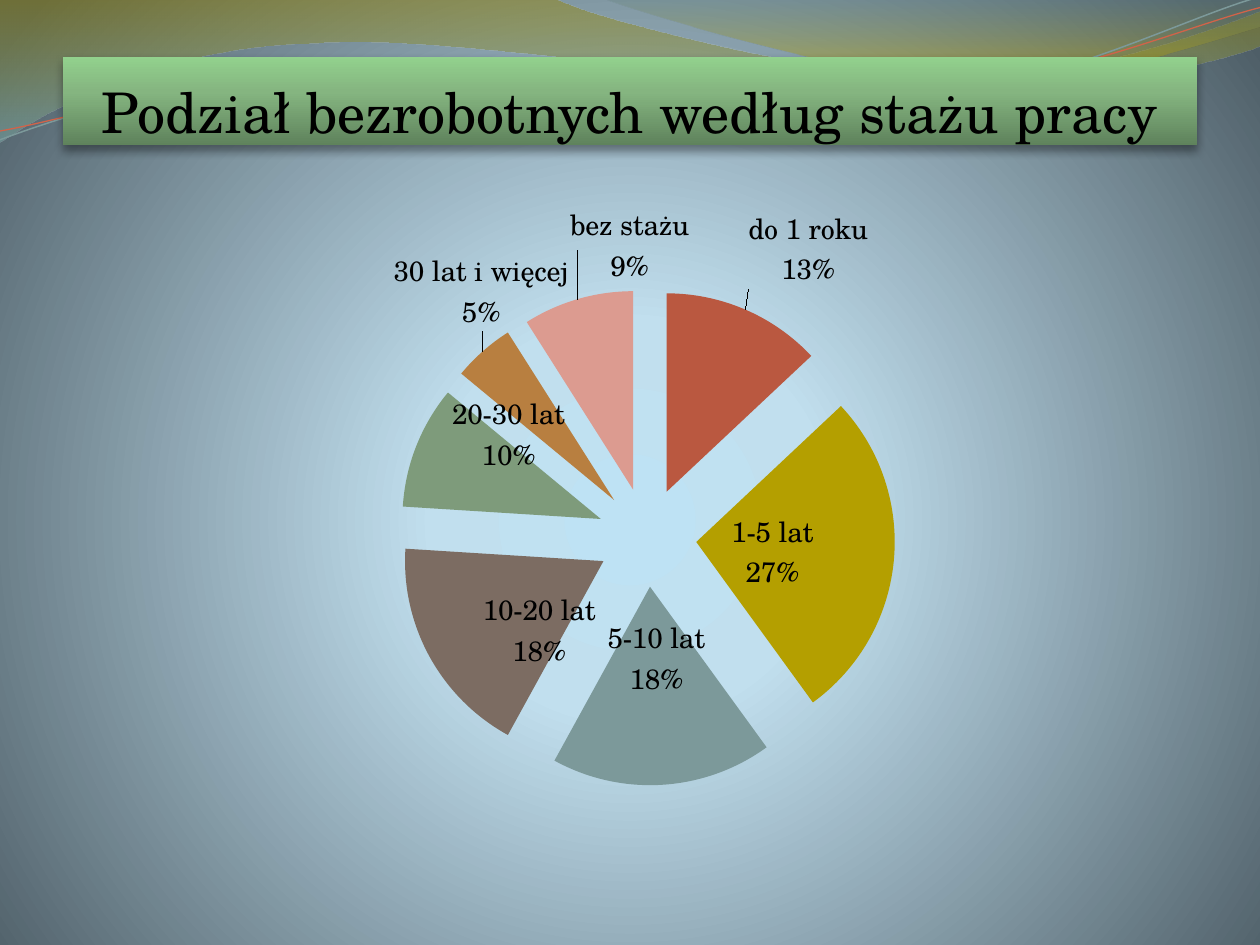
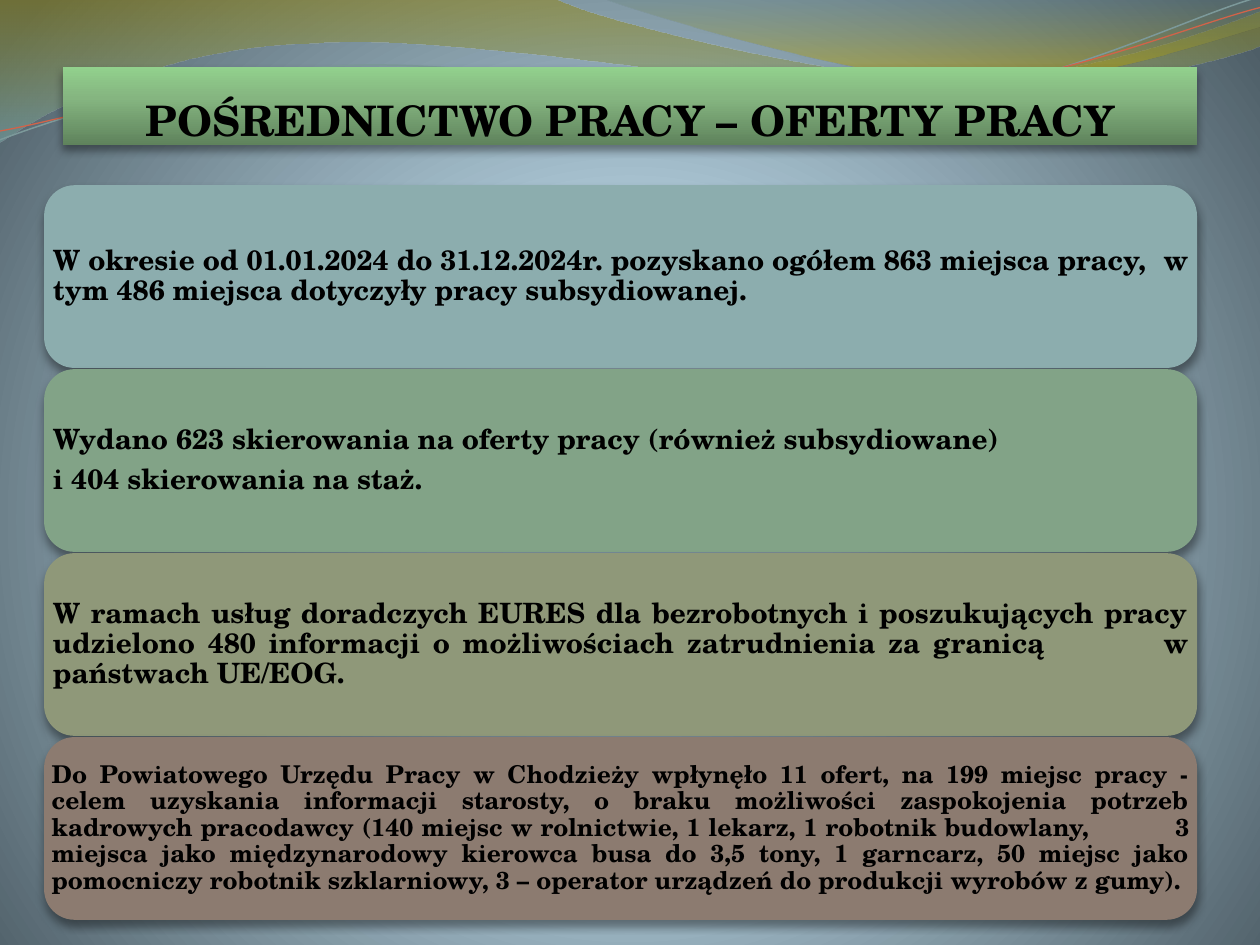
from dataclasses import dataclass

from lxml.etree import SubElement
from pptx import Presentation
from pptx.chart.data import CategoryChartData
from pptx.dml.color import RGBColor
from pptx.enum.chart import XL_CHART_TYPE, XL_LABEL_POSITION
from pptx.enum.shapes import MSO_SHAPE
from pptx.enum.text import MSO_ANCHOR, PP_ALIGN
from pptx.oxml.ns import qn
from pptx.util import Inches, Pt

FONT = "TeX Gyre Schola"
BLACK = RGBColor(0x00, 0x00, 0x00)
SKY = RGBColor(0xBE, 0xE2, 0xF4)
PALE_SKY = RGBColor(0xC1, 0xDF, 0xEE)
SLATE = RGBColor(0x4E, 0x5E, 0x67)
OLIVE = RGBColor(0x97, 0x85, 0x00)
LAGOON = RGBColor(0x77, 0xA5, 0xA6)
DEEP_TEAL = RGBColor(0x64, 0x84, 0x84)
MUSTARD = RGBColor(0xB4, 0x9F, 0x00)
TEAL = RGBColor(0x7C, 0x99, 0x9A)
CORAL = RGBColor(0xD1, 0x63, 0x49)
DARK_GREEN = RGBColor(0x5F, 0x83, 0x5C)
MID_GREEN = RGBColor(0x85, 0xB5, 0x80)
LIGHT_GREEN = RGBColor(0x92, 0xD1, 0x8D)
BRICK = RGBColor(0xBA, 0x58, 0x40)
TAUPE = RGBColor(0x7C, 0x6C, 0x62)
SAGE = RGBColor(0x7E, 0x9B, 0x7B)
AMBER = RGBColor(0xB8, 0x7F, 0x40)
ROSE = RGBColor(0xDC, 0x9B, 0x90)
PANEL_TEAL = RGBColor(0x8C, 0xAD, 0xAE)
PANEL_GREEN = RGBColor(0x82, 0xA3, 0x87)
PANEL_OLIVE = RGBColor(0x8F, 0x98, 0x79)
PANEL_TAUPE = RGBColor(0x8C, 0x7B, 0x70)


@dataclass(frozen=True)
class Stop:
    """One gradient stop, with position and opacity in percent."""
    position: int
    color: RGBColor
    opacity: int = 100


@dataclass(frozen=True)
class Wave:
    """A header outline of straight (2 numbers) and cubic (6 numbers) steps."""
    start: tuple[float, float]
    steps: tuple[tuple[float, ...], ...]
    stops: tuple[Stop, ...] = ()
    color: RGBColor | None = None
    width: float = 0


@dataclass(frozen=True)
class Slice:
    """A pie slice and its label; shift is a fraction of the chart size."""
    name: str
    percent: int
    color: RGBColor
    position: XL_LABEL_POSITION
    shift: tuple[float, float]


@dataclass(frozen=True)
class Panel:
    """A rounded panel of justified text; a bar marks a space widened by gap points."""
    color: RGBColor
    paragraphs: tuple[str, ...]
    size: int = 16
    inset: float = 0.07
    gap: float = 0


BACKDROP_STOPS = (Stop(0, SKY), Stop(25, PALE_SKY), Stop(100, SLATE))
TITLE_STOPS = (Stop(0, DARK_GREEN), Stop(60, MID_GREEN), Stop(100, LIGHT_GREEN))

WAVES = (
    Wave((0, 0), ((4.4, -0.01), (4.76, 0.17, 6.64, 0.63, 7.58, 0.63),
                  (8.53, 0.63, 9.58, 0.26, 10, 0.09), (10.01, 0.36),
                  (9.83, 0.44, 8.7, 0.76, 7.46, 0.75),
                  (6.22, 0.75, 3.82, 0.28, 2.57, 0.34),
                  (1.29, 0.36, 0.46, 0.83, -0.01, 1.13)),
         (Stop(0, OLIVE, 45), Stop(100, LAGOON, 55))),
    Wave((4.79, -0.01), ((5.09, 0.11, 6.82, 0.62, 7.69, 0.65),
                         (8.56, 0.69, 9.61, 0.32, 10, 0.21), (10, 0)),
         (Stop(0, DEEP_TEAL, 30), Stop(80, MUSTARD, 45))),
    Wave((0, 1.11), ((0.48, 0.93, 1.58, 0.57, 2.77, 0.52),
                     (3.95, 0.47, 5.93, 0.89, 7.13, 0.8),
                     (8.33, 0.71, 9.38, 0.15, 9.98, -0.02)),
         color=TEAL, width=0.85),
    Wave((0, 1.04), ((0.47, 0.96, 1.64, 0.61, 2.83, 0.56),
                     (4.03, 0.51, 5.97, 0.84, 7.17, 0.75),
                     (8.36, 0.67, 9.41, 0.21, 10, 0.06)),
         color=CORAL, width=0.75),
)

INSIDE = XL_LABEL_POSITION.CENTER
OUTSIDE = XL_LABEL_POSITION.OUTSIDE_END
SLICES = (
    Slice("do 1 roku", 13, BRICK, OUTSIDE, (0, -0.02)),
    Slice("1-5 lat", 27, MUSTARD, INSIDE, (-0.02, 0)),
    Slice("5-10 lat", 18, TEAL, INSIDE, (0, -0.04)),
    Slice("10-20 lat", 18, TAUPE, INSIDE, (0.02, 0.03)),
    Slice("20-30 lat", 10, SAGE, INSIDE, (0, -0.07)),
    Slice("30 lat i więcej", 5, AMBER, OUTSIDE, (0.08, -0.02)),
    Slice("bez stażu", 9, ROSE, OUTSIDE, (0.1, -0.06)),
)

PANELS = (
    Panel(PANEL_TEAL, ("W okresie od 01.01.2024 do 31.12.2024r. pozyskano ogółem 863 miejsca "
                       "pracy,|w tym 486 miejsca dotyczyły pracy subsydiowanej.",), gap=4.5),
    Panel(PANEL_GREEN, ("Wydano 623 skierowania na oferty pracy (również subsydiowane)",
                        "i 404 skierowania na staż.")),
    Panel(PANEL_OLIVE, ("W ramach usług doradczych EURES dla bezrobotnych i poszukujących pracy "
                        "udzielono 480 informacji o możliwościach zatrudnienia za granicą|w "
                        "państwach UE/EOG.",), gap=60),
    Panel(PANEL_TAUPE, ("Do Powiatowego Urzędu Pracy w Chodzieży wpłynęło 11 ofert, na 199 miejsc "
                        "pracy - celem uzyskania informacji starosty, o braku możliwości "
                        "zaspokojenia potrzeb kadrowych pracodawcy (140 miejsc w rolnictwie, "
                        "1 lekarz, 1 robotnik budowlany,|3 miejsca jako międzynarodowy kierowca "
                        "busa do 3,5 tony, 1 garncarz, 50 miejsc jako pomocniczy robotnik "
                        "szklarniowy, 3 – operator urządzeń do produkcji wyrobów z gumy).",),
          14, 0.06, 44),
)


def set_gradient(element, stops: tuple[Stop, ...], angle: int | None = None) -> None:
    """Fill with a linear gradient at an angle, or a circular one without."""
    gradient = next(element.iter(qn("a:gradFill")))
    gradient.clear()
    gradient.set("rotWithShape", "1")
    stop_list = SubElement(gradient, qn("a:gsLst"))
    for stop in stops:
        node = SubElement(stop_list, qn("a:gs"), pos=str(stop.position * 1000))
        color = SubElement(node, qn("a:srgbClr"), val=str(stop.color))
        if stop.opacity < 100:
            SubElement(color, qn("a:alpha"), val=str(stop.opacity * 1000))
    if angle is None:
        circle = SubElement(gradient, qn("a:path"), path="circle")
        SubElement(circle, qn("a:fillToRect"), l="10000", t="110000", r="10000", b="100000")
    else:
        SubElement(gradient, qn("a:lin"), ang=str(angle * 60000), scaled="0")


def add_soft_shadow(shape) -> None:
    """Give a shape a soft shadow straight below it."""
    shape.shadow.inherit = False
    effects = next(shape.element.iter(qn("a:effectLst")))
    shadow = SubElement(effects, qn("a:outerShdw"), blurRad=str(Pt(5.2)), dist=str(Pt(3)),
                        dir="5400000", rotWithShape="0")
    color = SubElement(shadow, qn("a:srgbClr"), val=str(BLACK))
    SubElement(color, qn("a:alpha"), val="40000")


def set_font(font, size: float, bold: bool = False) -> None:
    """Apply the shared typeface and colour."""
    font.name, font.size, font.bold = FONT, Pt(size), bold
    font.color.rgb = BLACK


def bend(shape, steps: tuple[tuple[float, ...], ...]) -> None:
    """Turn the straight sides of a freeform into its cubic curves."""
    sides = list(shape.element.iter(qn("a:lnTo")))
    for side, step in zip(sides, steps):
        if len(step) == 6:
            curve = SubElement(side.getparent(), qn("a:cubicBezTo"))
            for across, down in zip(step[::2], step[1::2]):
                SubElement(curve, qn("a:pt"), x=str(Inches(across) - shape.left),
                           y=str(Inches(down) - shape.top))
            side.getparent().replace(side, curve)


def add_wave(page, wave: Wave) -> None:
    """Draw one filled or outlined wave."""
    builder = page.shapes.build_freeform(*map(Inches, wave.start))
    corners = [(Inches(step[-2]), Inches(step[-1])) for step in wave.steps]
    builder.add_line_segments(corners, close=bool(wave.stops))
    shape = builder.convert_to_shape()
    bend(shape, wave.steps)
    shape.shadow.inherit = False
    if wave.stops:
        shape.fill.gradient()
        set_gradient(shape.element, wave.stops, 90)
        shape.line.fill.background()
    else:
        shape.fill.background()
        shape.line.color.rgb = wave.color
        shape.line.width = Pt(wave.width)


def add_page(deck, title: str, top: float, size: int, bold: bool = False):
    """Add a slide with the shared backdrop, waves and title band."""
    page = deck.slides.add_slide(deck.slide_layouts[6])
    page.background.fill.gradient()
    set_gradient(page.element, BACKDROP_STOPS)
    for wave in WAVES:
        add_wave(page, wave)
    band = page.shapes.add_shape(MSO_SHAPE.RECTANGLE, Inches(0.5), Inches(top),
                                 Inches(9), Inches(1.15 - top))
    band.fill.gradient()
    set_gradient(band.element, TITLE_STOPS, 270)
    band.line.fill.background()
    add_soft_shadow(band)
    frame = band.text_frame
    frame.margin_left = frame.margin_right = frame.margin_bottom = 0
    frame.vertical_anchor = MSO_ANCHOR.BOTTOM
    frame.text = title
    para = frame.paragraphs[0]
    para.alignment = PP_ALIGN.CENTER
    set_font(para.runs[0].font, size, bold)
    return page


def set_layout(parent, values: dict, place: int) -> None:
    """Position a chart part by hand."""
    layout = SubElement(parent, qn("c:layout"))
    manual = SubElement(layout, qn("c:manualLayout"))
    for name, value in values.items():
        SubElement(manual, qn(f"c:{name}"), val=str(value))
    parent.insert(place, layout)


def add_pie(page) -> None:
    """Draw the exploded pie of work experience."""
    data = CategoryChartData()
    data.categories = [item.name for item in SLICES]
    data.add_series("Series 1", [item.percent for item in SLICES])
    chart = page.shapes.add_chart(XL_CHART_TYPE.PIE, Inches(0.5), Inches(1.62),
                                  Inches(9), Inches(5.51), data).chart
    chart.has_legend = chart.has_title = False
    set_font(chart.font, 18)
    plot = chart.plots[0]
    plot.vary_by_categories = True
    for index, item in enumerate(SLICES):
        point = plot.series[0].points[index]
        point.format.fill.solid()
        point.format.fill.fore_color.rgb = item.color
        point.format.line.fill.background()
        set_font(point.data_label.font, 16)
        point.data_label.position = item.position
    root = chart.element
    for node in root.iter(qn("c:dPt")):
        explosion = SubElement(node, qn("c:explosion"), val="25")
        node.find(qn("c:spPr")).addprevious(explosion)
    for node, item in zip(root.iter(qn("c:dLbl")), SLICES):
        for flag, value in (("showVal", "0"), ("showCatName", "1"), ("showPercent", "1")):
            node.find(qn(f"c:{flag}")).set("val", value)
        separator = SubElement(node, qn("c:separator"))
        separator.text = "\n"
        set_layout(node, dict(zip("xy", item.shift)), 1)
    area = next(root.iter(qn("c:plotArea")))
    for old in area.findall(qn("c:layout")):
        area.remove(old)
    set_layout(area, {"layoutTarget": "inner", "xMode": "edge", "yMode": "edge",
                      "x": 0.34, "y": 0.18, "w": 0.35, "h": 0.6}, 0)


def fill_paragraph(para, text: str, panel: Panel) -> None:
    """Write one justified paragraph, with its widened space if any."""
    before, bar, after = text.partition("|")
    para.text = before
    if bar:
        space = para.add_run()
        space.text = " "
        space.font._element.set("spc", str(int(panel.gap * 100)))
        para.add_run().text = after
    para.alignment = PP_ALIGN.JUSTIFY
    para.line_spacing = 0.9
    para.space_after = Pt(panel.size * 0.35)
    for span in para.runs:
        set_font(span.font, panel.size, True)


def add_panel(page, panel: Panel, top: float) -> None:
    """Draw one rounded panel and the text over it."""
    area = (Inches(0.35), Inches(top), Inches(9.15), Inches(1.45))
    plate = page.shapes.add_shape(MSO_SHAPE.ROUNDED_RECTANGLE, *area)
    plate.fill.solid()
    plate.fill.fore_color.rgb = panel.color
    plate.line.fill.background()
    add_soft_shadow(plate)
    frame = page.shapes.add_textbox(*area).text_frame
    frame.margin_left = frame.margin_right = Inches(panel.inset)
    frame.margin_top = frame.margin_bottom = Inches(panel.inset)
    frame.vertical_anchor = MSO_ANCHOR.MIDDLE
    frame.word_wrap = True
    frame.text = "\n".join(panel.paragraphs)
    for para, text in zip(frame.paragraphs, panel.paragraphs):
        fill_paragraph(para, text, panel)


def main() -> None:
    """Build both slides and save the deck."""
    deck = Presentation()
    deck.slide_width, deck.slide_height = Inches(10), Inches(7.5)
    add_pie(add_page(deck, "Podział bezrobotnych według stażu pracy", 0.45, 32))
    offers = add_page(deck, "POŚREDNICTWO PRACY – OFERTY PRACY", 0.53, 24, True)
    for row, panel in enumerate(PANELS):
        add_panel(offers, panel, 1.47 + row * 1.46)
    deck.save("out.pptx")


if __name__ == "__main__":
    main()
